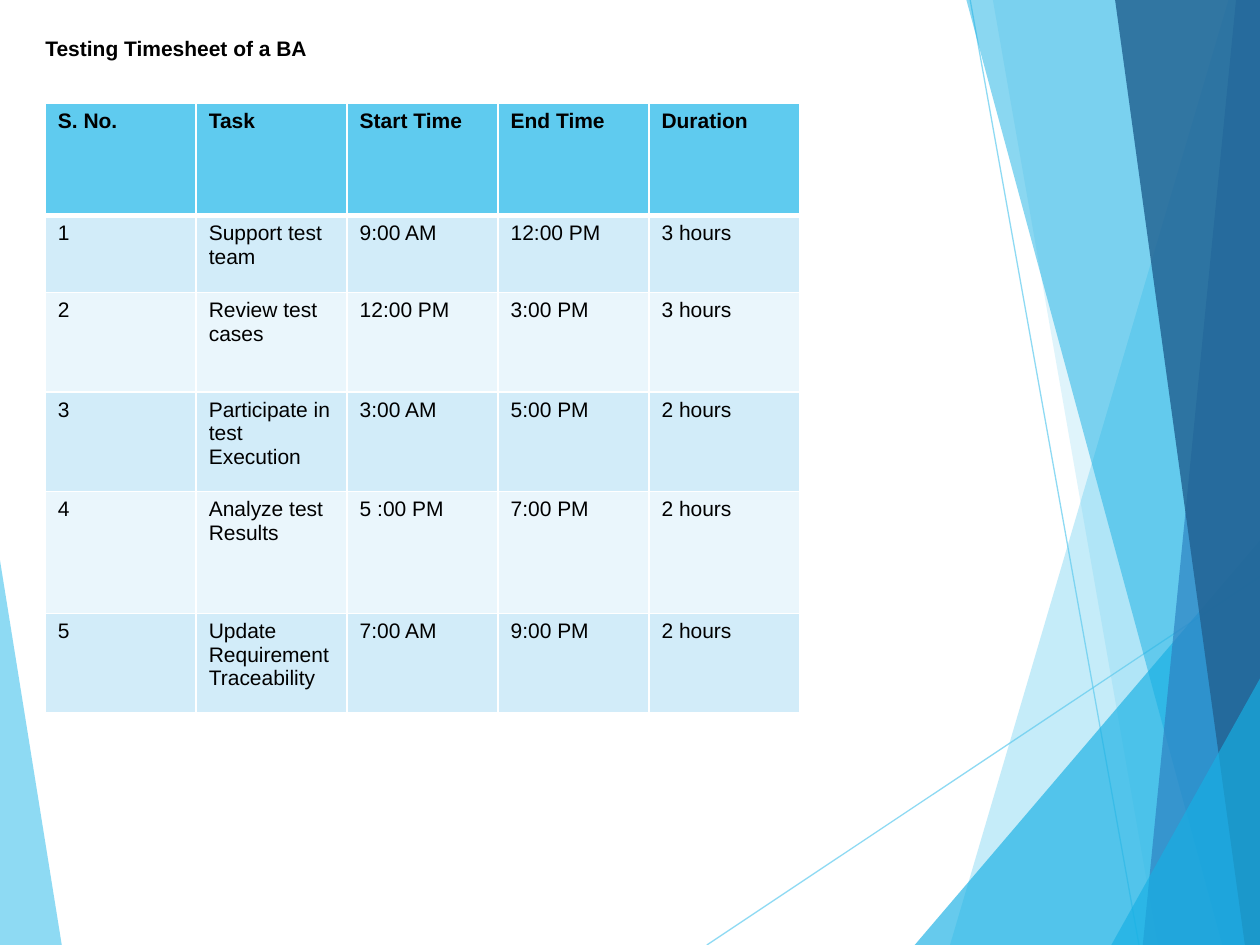
from lxml.etree import SubElement
from pptx import Presentation
from pptx.dml.color import RGBColor
from pptx.enum.shapes import MSO_CONNECTOR
from pptx.enum.text import MSO_ANCHOR, PP_ALIGN
from pptx.oxml.ns import qn
from pptx.util import Inches, Pt

COLORS = {
    "sky": "5FCBEF", "cyan": "17B0E4", "blue": "2E83C3", "navy": "226292",
    "band_dark": "D2ECF9", "band_light": "EAF6FC",
    "white": "FFFFFF", "text": "000000",
}


def write_text(frame, text, size=12, bold=False, color="text", font="Arial"):
    frame.text = text
    paragraph = frame.paragraphs[0]
    paragraph.alignment = PP_ALIGN.LEFT
    paragraph.font.name = font
    paragraph.font.size = Pt(size)
    paragraph.font.bold = bold
    paragraph.font.color.rgb = RGBColor.from_string(COLORS[color])


def paint(fill, color, opacity):
    """Fill with a solid colour at an opacity given in percent."""
    fill.solid()
    fill.fore_color.rgb = RGBColor.from_string(COLORS[color])
    color_element = fill._xPr.find(qn("a:solidFill"))[0]
    SubElement(color_element, qn("a:alpha"), val=str(opacity * 1000))


presentation = Presentation()
presentation.slide_width = Inches(10)
presentation.slide_height = Inches(7.5)
slide = presentation.slides.add_slide(presentation.slide_layouts[5])

# Decoration is laid out in thousandths of the slide's width and height
unit_x = presentation.slide_width / 1000
unit_y = presentation.slide_height / 1000

# Thin crossing lines
for start_x, start_y, end_x, end_y in [(561, 1000, 1000, 610), (770, 0, 904, 1000)]:
    line = slide.shapes.add_connector(
        MSO_CONNECTOR.STRAIGHT,
        round(start_x * unit_x), round(start_y * unit_y),
        round(end_x * unit_x), round(end_y * unit_y))
    line.line.width = Pt(0.75)
    paint(line.line.fill, "sky", 70)
    SubElement(line._element.spPr, qn("a:effectLst"))

# Translucent panels, from back to front
right_edge = [(1000, 1000), (1000, 0)]
panels = [
    ([(0, 593), (49, 1000), (0, 1000)], "sky", 70),
    ([(975, 0), (754, 1000), *right_edge], "sky", 36),
    ([(788, 0), (919, 1000), *right_edge], "sky", 20),
    ([(726, 1000), (1000, 572), (1000, 1000)], "cyan", 66),
    ([(767, 0), (970, 1000), *right_edge], "cyan", 50),
    ([(981, 0), (907, 1000), *right_edge], "blue", 70),
    ([(885, 0), (988, 1000), *right_edge], "navy", 82),
    ([(882, 1000), (1000, 718), (1000, 1000)], "cyan", 66),
]
for points, color, opacity in panels:
    builder = slide.shapes.build_freeform(*points[0], scale=(unit_x, unit_y))
    builder.add_line_segments(points[1:], close=True)
    panel = builder.convert_to_shape()
    panel.shadow.inherit = False
    panel.line.fill.background()
    paint(panel.fill, color, opacity)

# Title
title = slide.shapes.title
title.left, title.top = Inches(0.26), Inches(0.23)
title.width, title.height = Inches(7.5), Inches(0.3)
title.text_frame.vertical_anchor = MSO_ANCHOR.TOP
title.text_frame.word_wrap = True
write_text(title.text_frame, "Testing Timesheet of a BA", bold=True)

# Timesheet table
timesheet = [
    ("S. No.", "Task", "Start Time", "End Time", "Duration"),
    ("1", "Support test team", "9:00 AM", "12:00 PM", "3 hours"),
    ("2", "Review test cases", "12:00 PM", "3:00 PM", "3 hours"),
    ("3", "Participate in test Execution", "3:00 AM", "5:00 PM", "2 hours"),
    ("4", "Analyze test Results", "5 :00 PM", "7:00 PM", "2 hours"),
    ("5", "Update Requirement Traceability", "7:00 AM", "9:00 PM", "2 hours"),
]
row_heights = [0.89, 0.61, 0.79, 0.79, 0.97, 0.79]
table = slide.shapes.add_table(
    len(timesheet), len(timesheet[0]),
    Inches(0.36), Inches(0.82), Inches(5.99), Inches(sum(row_heights))).table

for row_index, values in enumerate(timesheet):
    table.rows[row_index].height = Inches(row_heights[row_index])
    is_header = row_index == 0
    band = "sky" if is_header else ("band_light", "band_dark")[row_index % 2]
    # The rule under the header is heavier than the rest
    border_widths = {"lnL": 1, "lnR": 1,
                     "lnT": 3 if row_index == 1 else 1,
                     "lnB": 3 if is_header else 1}
    for column_index, value in enumerate(values):
        cell = table.cell(row_index, column_index)
        write_text(cell.text_frame, value, bold=is_header)
        properties = cell._tc.get_or_add_tcPr()
        for side, width in border_widths.items():
            border = SubElement(properties, qn(f"a:{side}"), w=str(Pt(width)))
            border_fill = SubElement(border, qn("a:solidFill"))
            SubElement(border_fill, qn("a:srgbClr"), val=COLORS["white"])
        cell.fill.solid()
        cell.fill.fore_color.rgb = RGBColor.from_string(COLORS[band])

presentation.save("out.pptx")
